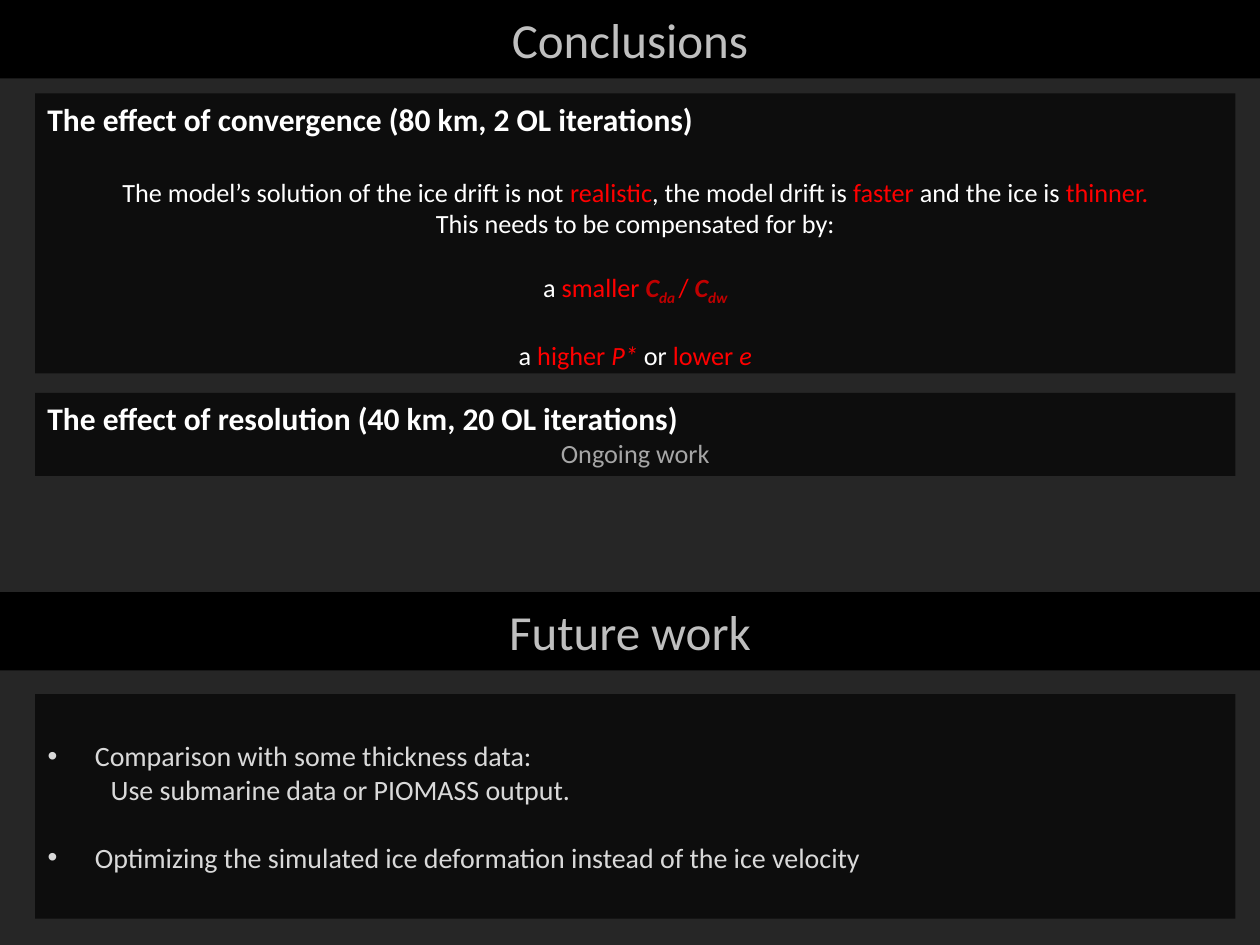
from lxml import etree
from pptx import Presentation
from pptx.dml.color import RGBColor
from pptx.enum.shapes import MSO_SHAPE
from pptx.enum.text import MSO_ANCHOR, MSO_AUTO_SIZE, PP_ALIGN
from pptx.oxml.ns import qn
from pptx.util import Pt

RECTANGLE = MSO_SHAPE.RECTANGLE
TOP, MIDDLE = MSO_ANCHOR.TOP, MSO_ANCHOR.MIDDLE
NO_AUTOFIT = MSO_AUTO_SIZE.NONE
LEFT, CENTER = PP_ALIGN.LEFT, PP_ALIGN.CENTER

FONT = "Calibri"
COLORS = {
    "background": "262626",
    "band": "000000",
    "panel": "0D0D0D",
    "title": "BFBFBF",
    "white": "FFFFFF",
    "red": "FF0000",
    "dark_red": "C00000",
    "muted": "A6A6A6",
    "list": "D9D9D9",
}
SLIDE_WIDTH, SLIDE_HEIGHT = 720, 540
BAND_HEIGHT = 44.8
PANEL_LEFT, PANEL_WIDTH = 20, 686
HEADING_SIZE, TEXT_SIZE, LIST_SIZE = 18, 15, 16
LINE_FACTOR = 1.22

FINDINGS = [
    (22, [("The model’s solution of the ice drift is not ", "white", ""),
          ("realistic", "red", ""),
          (", the model drift is ", "white", ""),
          ("faster", "red", ""),
          (" and the ice is ", "white", ""),
          ("thinner.", "red", "")]),
    (0, [("This needs to be compensated for by:", "white", "")]),
    (TEXT_SIZE * LINE_FACTOR, [("a ", "white", ""),
                               ("smaller ", "red", ""),
                               ("C", "dark_red", "bi"),
                               ("da ", "dark_red", "bis"),
                               ("/ ", "red", ""),
                               ("C", "dark_red", "bi"),
                               ("dw", "dark_red", "bis")]),
    (TEXT_SIZE * LINE_FACTOR, [("a ", "white", ""),
                               ("higher ", "red", ""),
                               ("P*", "red", "i"),
                               (" or ", "white", ""),
                               ("lower ", "red", ""),
                               ("e", "red", "i")]),
]
ONGOING = [(0, [("Ongoing work", "muted", "")])]
FUTURE_ITEMS = [
    (0, True, "Comparison with some thickness data:"),
    (0, False, "Use submarine data or PIOMASS output."),
    (LIST_SIZE * LINE_FACTOR, True,
     "Optimizing the simulated ice deformation instead of the ice velocity"),
]


def rgb(name):
    """Return the named colour."""
    return RGBColor.from_string(COLORS[name])


def format_box(shape, box, fill, anchor):
    """Place a shape in its box and set its fill and text frame."""
    shape.left, shape.top, shape.width, shape.height = map(Pt, box)
    shape.fill.solid()
    shape.fill.fore_color.rgb = rgb(fill)
    frame = shape.text_frame
    frame.word_wrap = True
    frame.auto_size = NO_AUTOFIT
    frame.vertical_anchor = anchor
    return frame


def add_rectangle(slide):
    """Add a rectangle without line or shadow."""
    shape = slide.shapes.add_shape(RECTANGLE, 0, 0, Pt(1), Pt(1))
    shape.line.fill.background()
    shape.shadow.inherit = False
    return shape


def format_paragraph(paragraph, size, color, align, before=0, bold=False):
    """Set the font, alignment and spacing of a paragraph."""
    paragraph.alignment = align
    paragraph.space_before = Pt(round(before, 1))
    font = paragraph.font
    font.name, font.size, font.bold = FONT, Pt(size), bold
    font.color.rgb = rgb(color)


def fill_band(shape, box, text):
    """Turn a shape into a title band."""
    paragraph = format_box(shape, box, "band", MIDDLE).paragraphs[0]
    paragraph.text = text
    format_paragraph(paragraph, 28, "title", CENTER)


def add_findings(slide, box, heading, lines):
    """Add a panel with a heading over centred lines of styled runs."""
    frame = format_box(add_rectangle(slide), box, "panel", TOP)
    frame.text = heading
    format_paragraph(frame.paragraphs[0], HEADING_SIZE, "white", LEFT, bold=True)
    for before, runs in lines:
        paragraph = frame.add_paragraph()
        format_paragraph(paragraph, TEXT_SIZE, "white", CENTER, before)
        for text, color, style in runs:
            run = paragraph.add_run()
            run.text = text
            run.font.color.rgb = rgb(color)
            if "b" in style:
                run.font.bold = True
            if "i" in style:
                run.font.italic = True
            if "s" in style:
                run._r.get_or_add_rPr().set("baseline", "-25000")


def set_bullet(paragraph, bulleted):
    """Set the indents of a list paragraph and its bullet, if it has one."""
    properties = paragraph._p.get_or_add_pPr()
    margin, indent = (27, -27) if bulleted else (36, 0)
    properties.set("marL", str(Pt(margin)))
    properties.set("indent", str(Pt(indent)))
    if bulleted:
        bullet = etree.Element(qn("a:buChar"), char="•")
    else:
        bullet = etree.Element(qn("a:buNone"))
    properties.find(qn("a:defRPr")).addprevious(bullet)


def fill_future_list(shape, box, items):
    """Turn the body placeholder into the list panel."""
    frame = format_box(shape, box, "panel", TOP)
    frame.margin_top = Pt(25.6)
    for index, (before, bulleted, text) in enumerate(items):
        paragraph = frame.add_paragraph() if index else frame.paragraphs[0]
        paragraph.text = text
        paragraph.level = 0 if bulleted else 1
        format_paragraph(paragraph, LIST_SIZE, "list", LEFT, before)
        set_bullet(paragraph, bulleted)


def main():
    """Build and save the slide."""
    presentation = Presentation()
    presentation.slide_width = Pt(SLIDE_WIDTH)
    presentation.slide_height = Pt(SLIDE_HEIGHT)
    slide = presentation.slides.add_slide(presentation.slide_layouts[1])
    background = slide.background.fill
    background.solid()
    background.fore_color.rgb = rgb("background")

    fill_band(slide.shapes.title, (0, 0, SLIDE_WIDTH, BAND_HEIGHT), "Conclusions")
    add_findings(slide, (PANEL_LEFT, 53.4, PANEL_WIDTH, 160),
                 "The effect of convergence (80 km, 2 OL iterations)", FINDINGS)
    add_findings(slide, (PANEL_LEFT, 224.6, PANEL_WIDTH, 47.4),
                 "The effect of resolution (40 km, 20 OL iterations)", ONGOING)
    fill_future_list(slide.placeholders[1], (PANEL_LEFT, 396.6, PANEL_WIDTH, 128.4),
                     FUTURE_ITEMS)
    fill_band(add_rectangle(slide), (0, 338.4, SLIDE_WIDTH, BAND_HEIGHT),
              "Future work")
    presentation.save("out.pptx")


if __name__ == "__main__":
    main()
